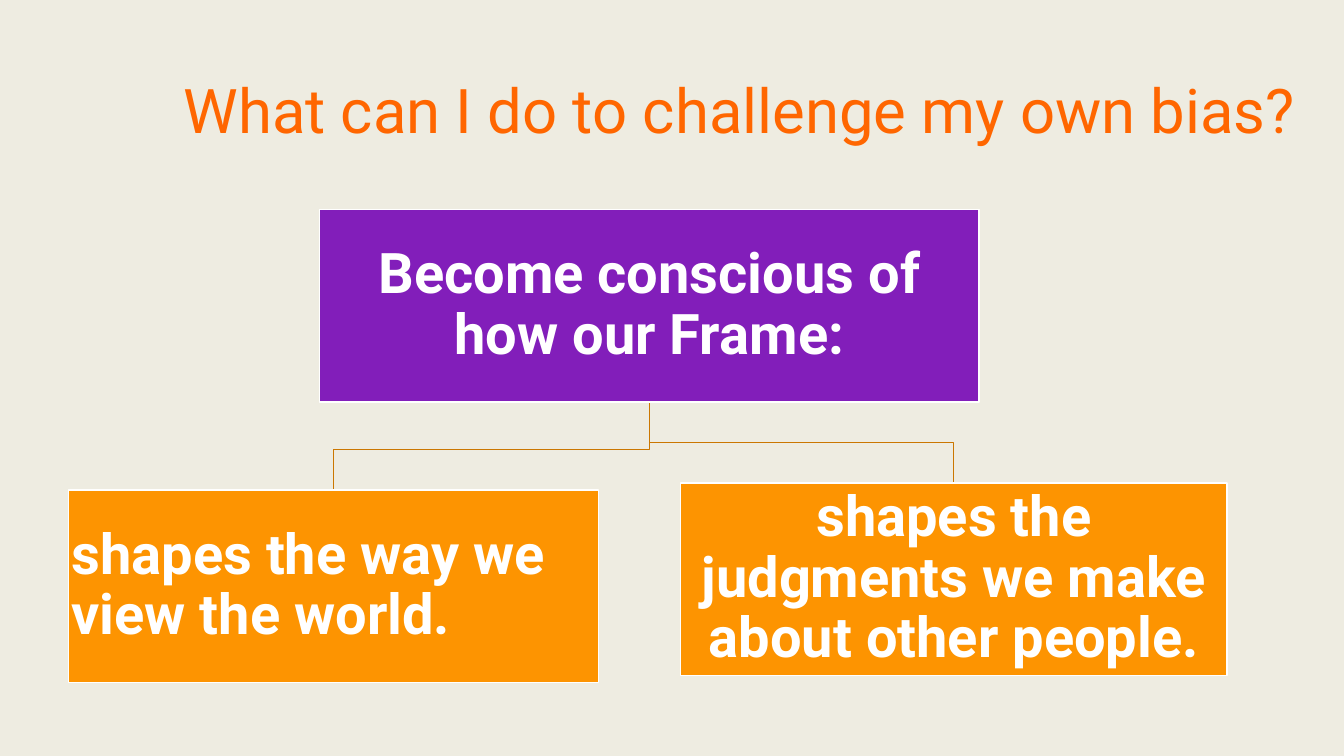
"""Build a slide with a two-branch hierarchy on challenging one's own bias."""
from dataclasses import dataclass

from pptx import Presentation
from pptx import util as u
from pptx.dml.color import RGBColor
from pptx.enum import shapes, text

SLIDE_W, SLIDE_H = u.Inches(13.33), u.Inches(7.5)
FONT = "Roboto"
WHITE, PURPLE, ORANGE = "FFFFFF", "821EBA", "FD9401"
BOX_ROWS, BEND_ROWS = 25.47, 5.33


def col(n: float) -> int:
    """Return n hundredths of the slide width."""
    return round(SLIDE_W * n / 100)


def row(n: float) -> int:
    """Return n hundredths of the slide height."""
    return round(SLIDE_H * n / 100)


def rgb(value: str) -> RGBColor:
    """Return the colour of a hex string."""
    return RGBColor.from_string(value)


@dataclass(frozen=True)
class Box:
    """A node of the hierarchy, placed in columns and rows."""
    label: str
    left: float
    top: float
    width: float
    fill: str
    align: text.PP_ALIGN = text.PP_ALIGN.CENTER

    @property
    def center(self) -> float:
        """Return the column of the middle of the box."""
        return self.left + self.width / 2


ROOT = Box("Become conscious of how our Frame:", 23.78, 27.73, 49.06, PURPLE)
BRANCHES = (
    Box("shapes the way we view the world.", 5.1, 64.8, 39.46, ORANGE,
        text.PP_ALIGN.LEFT),
    Box("shapes the judgments we make about other people.", 50.64, 63.87,
        40.66, ORANGE),
)


def write(tf, label: str, size: int, color: str, align: text.PP_ALIGN,
          bold: bool = False) -> None:
    """Fill a text frame with one formatted paragraph."""
    tf.text = label
    tf.word_wrap = True
    tf.auto_size = text.MSO_AUTO_SIZE.NONE
    tf.vertical_anchor = text.MSO_ANCHOR.MIDDLE
    p = tf.paragraphs[0]
    p.alignment = align
    p.line_spacing = 0.9
    font = p.runs[0].font
    font.name, font.size, font.bold = FONT, u.Pt(size), bold
    font.color.rgb = rgb(color)


def outline(sp, color: str) -> None:
    """Give a shape a thin line and no shadow."""
    sp.shadow.inherit = False
    sp.line.color.rgb = rgb(color)
    sp.line.width = u.Pt(1)


def add_title(slide, label: str) -> None:
    """Place and format the title placeholder."""
    sp = slide.shapes.title
    sp.left, sp.top = col(12.9), row(5.33)
    sp.width, sp.height = col(86.27), row(19.33)
    write(sp.text_frame, label, 44, "FF6600", text.PP_ALIGN.LEFT)


def add_branch_line(slide, parent: Box, child: Box) -> None:
    """Draw the elbow line from a parent box to its child."""
    bend = row(child.top - BEND_ROWS)
    start, end = col(parent.center), col(child.center)
    builder = slide.shapes.build_freeform(start, row(parent.top + BOX_ROWS))
    builder.add_line_segments(
        [(start, bend), (end, bend), (end, row(child.top))], close=False)
    sp = builder.convert_to_shape()
    sp.fill.background()
    outline(sp, "CB7701")


def add_box(slide, box: Box) -> None:
    """Draw one labelled box."""
    sp = slide.shapes.add_shape(
        shapes.MSO_SHAPE.RECTANGLE, col(box.left), row(box.top),
        col(box.width), row(BOX_ROWS))
    sp.fill.solid()
    sp.fill.fore_color.rgb = rgb(box.fill)
    outline(sp, WHITE)
    tf = sp.text_frame
    tf.margin_left = tf.margin_right = u.Inches(0.03)
    tf.margin_top = tf.margin_bottom = u.Inches(0.03)
    write(tf, box.label, 40, WHITE, box.align, bold=True)


def main() -> None:
    """Build and save the presentation."""
    prs = Presentation()
    prs.slide_width, prs.slide_height = SLIDE_W, SLIDE_H
    slide = prs.slides.add_slide(prs.slide_layouts[5])
    slide.background.fill.solid()
    slide.background.fill.fore_color.rgb = rgb("EEECE1")
    add_title(slide, "What can I do to challenge my own bias?")
    for branch in BRANCHES:
        add_branch_line(slide, ROOT, branch)
    for box in (ROOT, *BRANCHES):
        add_box(slide, box)
    prs.save("out.pptx")


if __name__ == "__main__":
    main()
